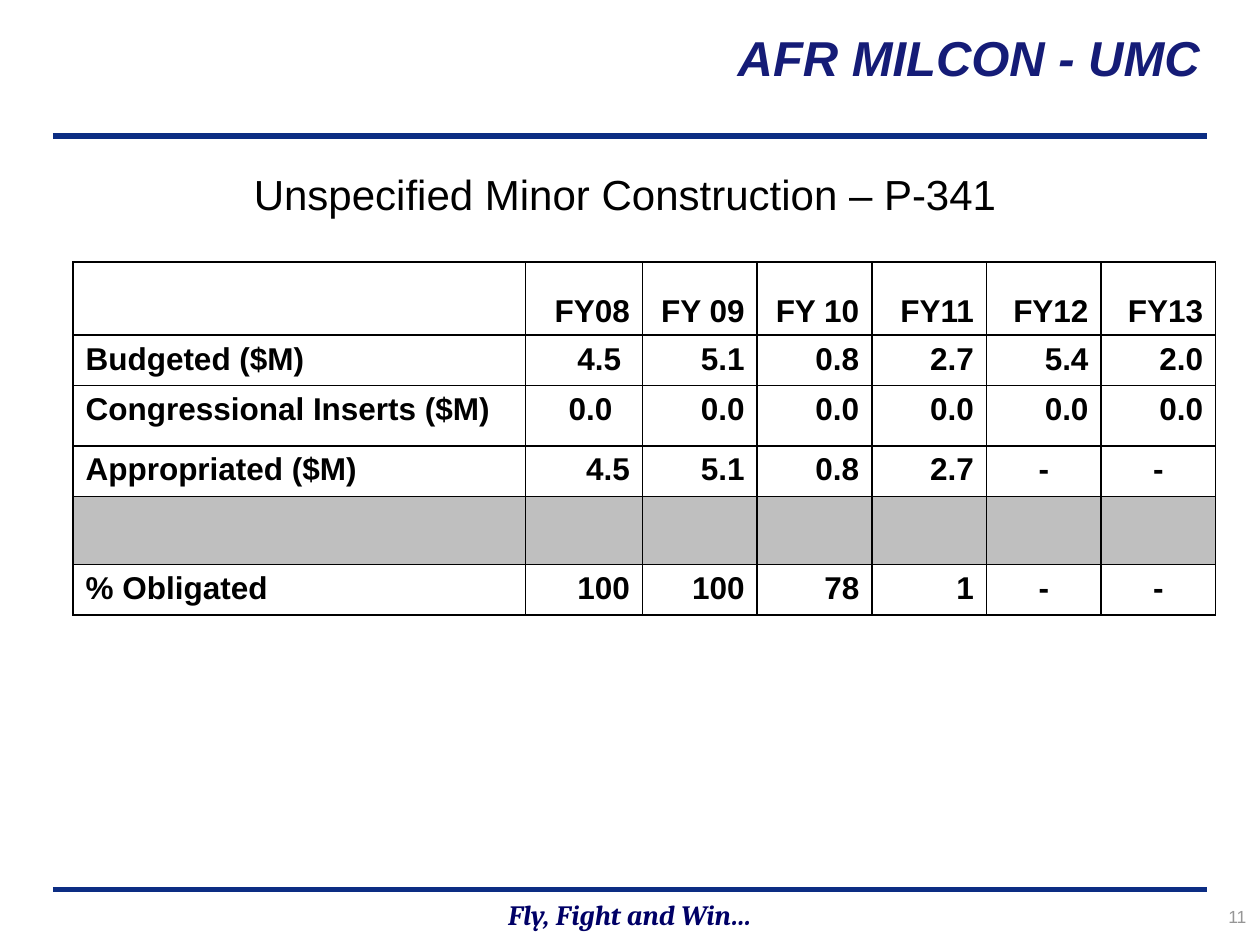
from lxml import etree
from pptx import Presentation
from pptx.dml.color import RGBColor
from pptx.enum import shapes, text
from pptx.oxml import ns
from pptx.util import Inches, Pt

NAVY = RGBColor(0x0C, 0x2D, 0x83)
INDIGO = RGBColor(0x15, 0x1C, 0x77)
MOTTO = RGBColor(0x00, 0x00, 0x66)
BLACK = RGBColor(0x00, 0x00, 0x00)
WHITE = RGBColor(0xFF, 0xFF, 0xFF)
GRAY = RGBColor(0x96, 0x96, 0x96)
BAND = RGBColor(0xBF, 0xBF, 0xBF)
LEFT, MID, RIGHT = text.PP_ALIGN.LEFT, text.PP_ALIGN.CENTER, text.PP_ALIGN.RIGHT
TOP, CENTER, BOTTOM = text.MSO_ANCHOR.TOP, text.MSO_ANCHOR.MIDDLE, text.MSO_ANCHOR.BOTTOM


def write(frame, words, align, size, color, **style):
    para = frame.paragraphs[0]
    para.alignment = align
    run = para.add_run()
    run.text = words
    run.font.color.rgb = color
    for key, value in {"size": Pt(size), "name": "Arial", **style}.items():
        setattr(run.font, key, value)


def border(cell):
    props = cell._tc.get_or_add_tcPr()
    for side in ("a:lnL", "a:lnR", "a:lnT", "a:lnB"):
        line = etree.SubElement(props, ns.qn(side), w=str(Pt(1)))
        fill = etree.SubElement(line, ns.qn("a:solidFill"))
        etree.SubElement(fill, ns.qn("a:srgbClr"), val=str(BLACK))


deck = Presentation()
deck.slide_width, deck.slide_height = Inches(10), Inches(7.5)
slide = deck.slides.add_slide(deck.slide_layouts[6])

for y in (7.06, 1.08):
    rule = slide.shapes.add_connector(
        shapes.MSO_CONNECTOR.STRAIGHT, Inches(0.42), Inches(y), Inches(9.58), Inches(y))
    rule.line.color.rgb = NAVY
    rule.line.width = Pt(3)
    etree.SubElement(rule._element.spPr, ns.qn("a:effectLst"))

slant = {"bold": True, "italic": True}
labels = [
    ("Fly, Fight and Win…", (0, 7.07, 10, 0.37), CENTER, True, MID, 16, MOTTO,
     {"name": "Cambria", **slant}),
    ("11", (8.74, 7.14, 1.25, 0.33), TOP, True, RIGHT, 10, GRAY, {}),
    ("AFR MILCON - UMC", (1.75, 0.17, 7.87, 0.98), TOP, True, RIGHT, 28, INDIGO, slant),
    ("Unspecified Minor Construction – P-341", (1.67, 1.29, 6.58, 0.51), TOP, False,
     MID, 24, BLACK, {}),
]
for words, place, anchor, wrap, align, size, color, style in labels:
    frame = slide.shapes.add_textbox(*map(Inches, place)).text_frame
    frame.word_wrap = wrap
    frame.vertical_anchor = anchor
    write(frame, words, align, size, color, **style)

rows = [
    ["", "FY08", "FY 09", "FY 10", "FY11", "FY12", "FY13"],
    ["Budgeted ($M)", "4.5", "5.1", "0.8", "2.7", "5.4", "2.0"],
    ["Congressional Inserts ($M)"] + ["0.0"] * 6,
    ["Appropriated ($M)", "4.5", "5.1", "0.8", "2.7", "-", "-"],
    [""] * 7,
    ["% Obligated", "100", "100", "78", "1", "-", "-"],
]
widths = [3.59, 0.93] + [0.91] * 5
heights = [0.58, 0.4, 0.48, 0.4, 0.54, 0.4]
insets = {(1, 1): 0.17, (2, 1): 0.24}

table = slide.shapes.add_table(
    len(rows), len(widths), Inches(0.58), Inches(2.08),
    Inches(sum(widths)), Inches(sum(heights))).table
table.first_row = table.horz_banding = False
for col, width in zip(table.columns, widths):
    col.width = Inches(width)
for r, (row, height) in enumerate(zip(rows, heights)):
    table.rows[r].height = Inches(height)
    for c, words in enumerate(row):
        cell = table.cell(r, c)
        border(cell)
        cell.fill.solid()
        cell.fill.fore_color.rgb = WHITE if any(row) else BAND
        cell.vertical_anchor = TOP if r else BOTTOM
        cell.margin_right = Inches(insets.get((r, c), 0.1))
        if words:
            align = LEFT if c == 0 else MID if words == "-" else RIGHT
            write(cell.text_frame, words, align, 18, BLACK, bold=True)

deck.save("out.pptx")
